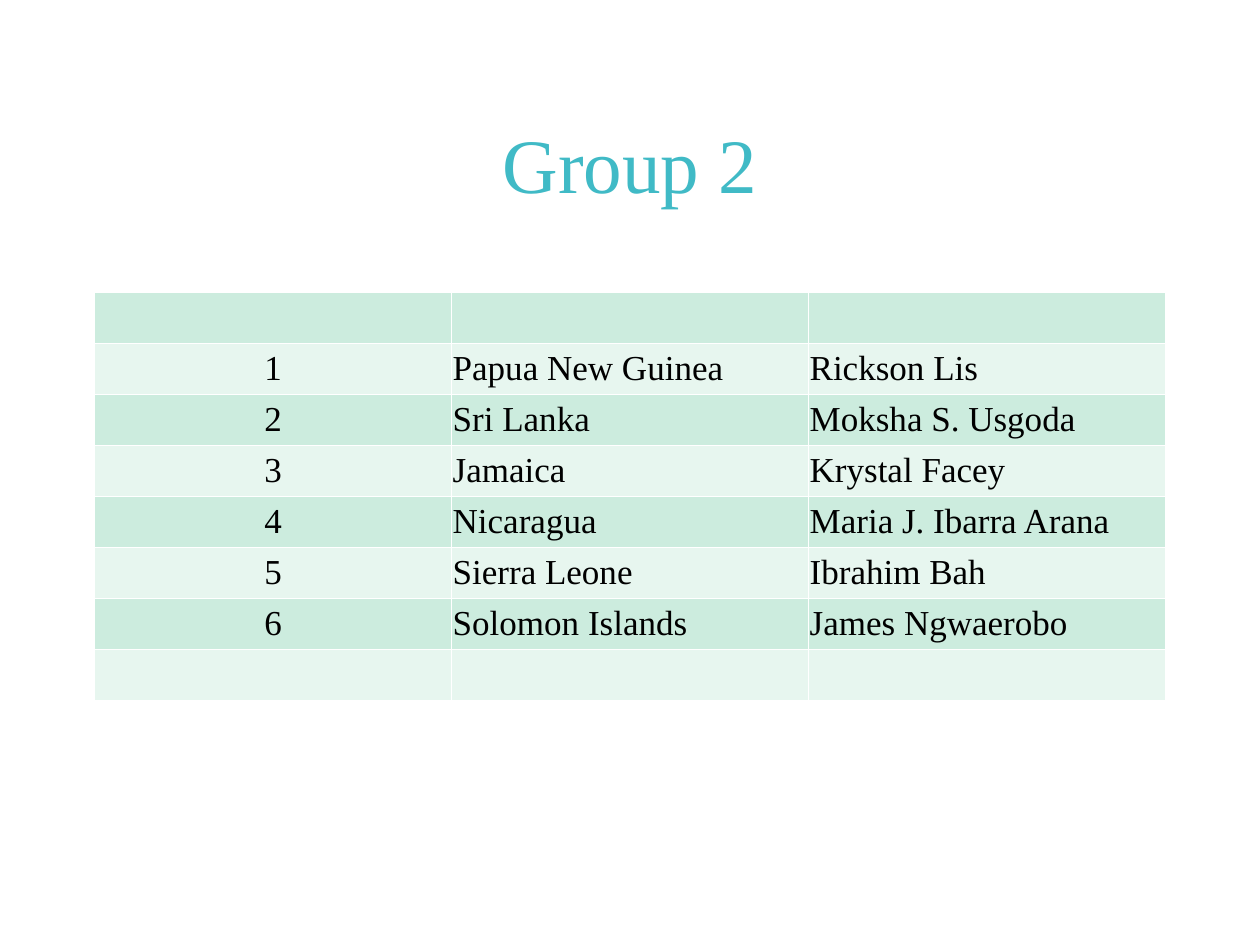
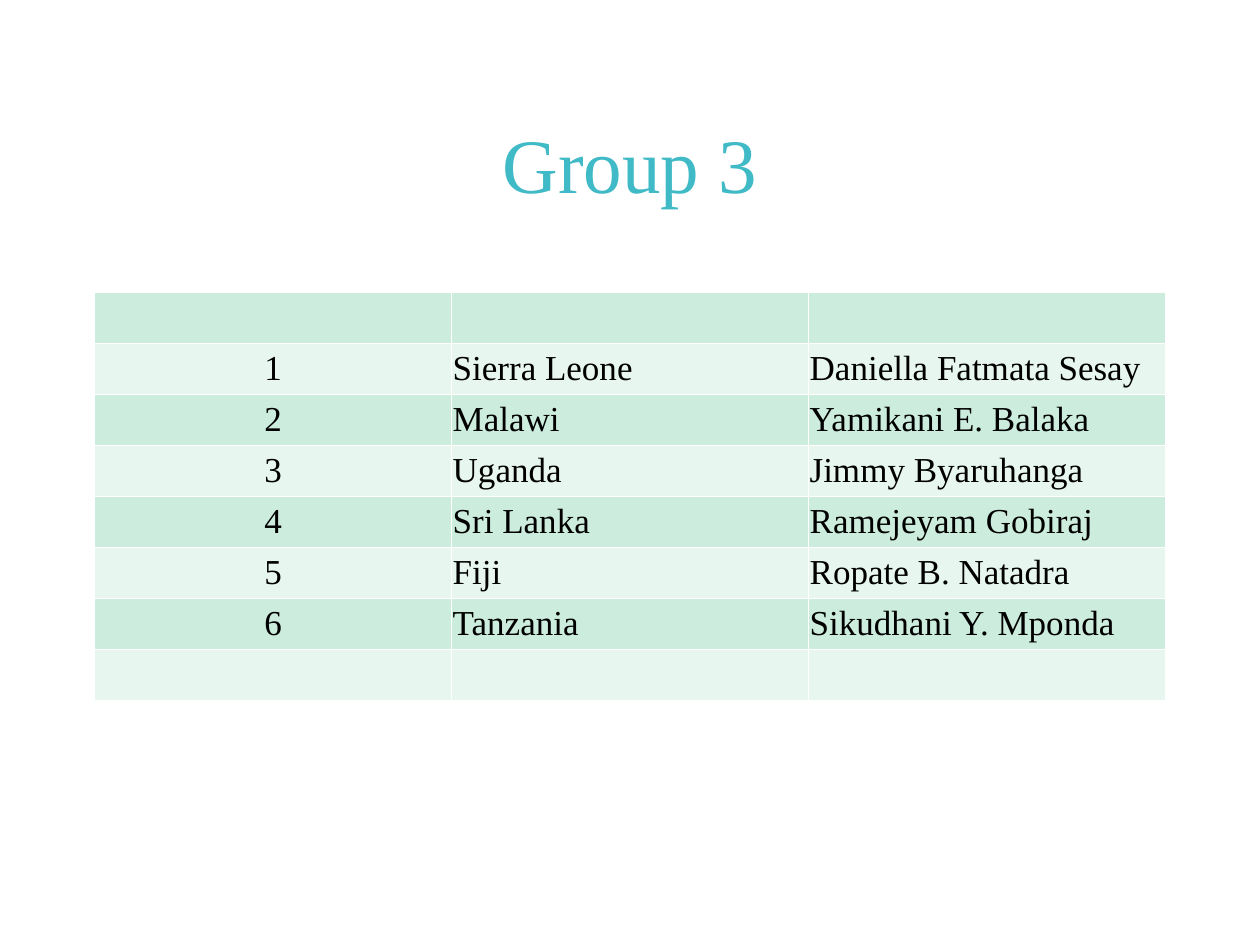
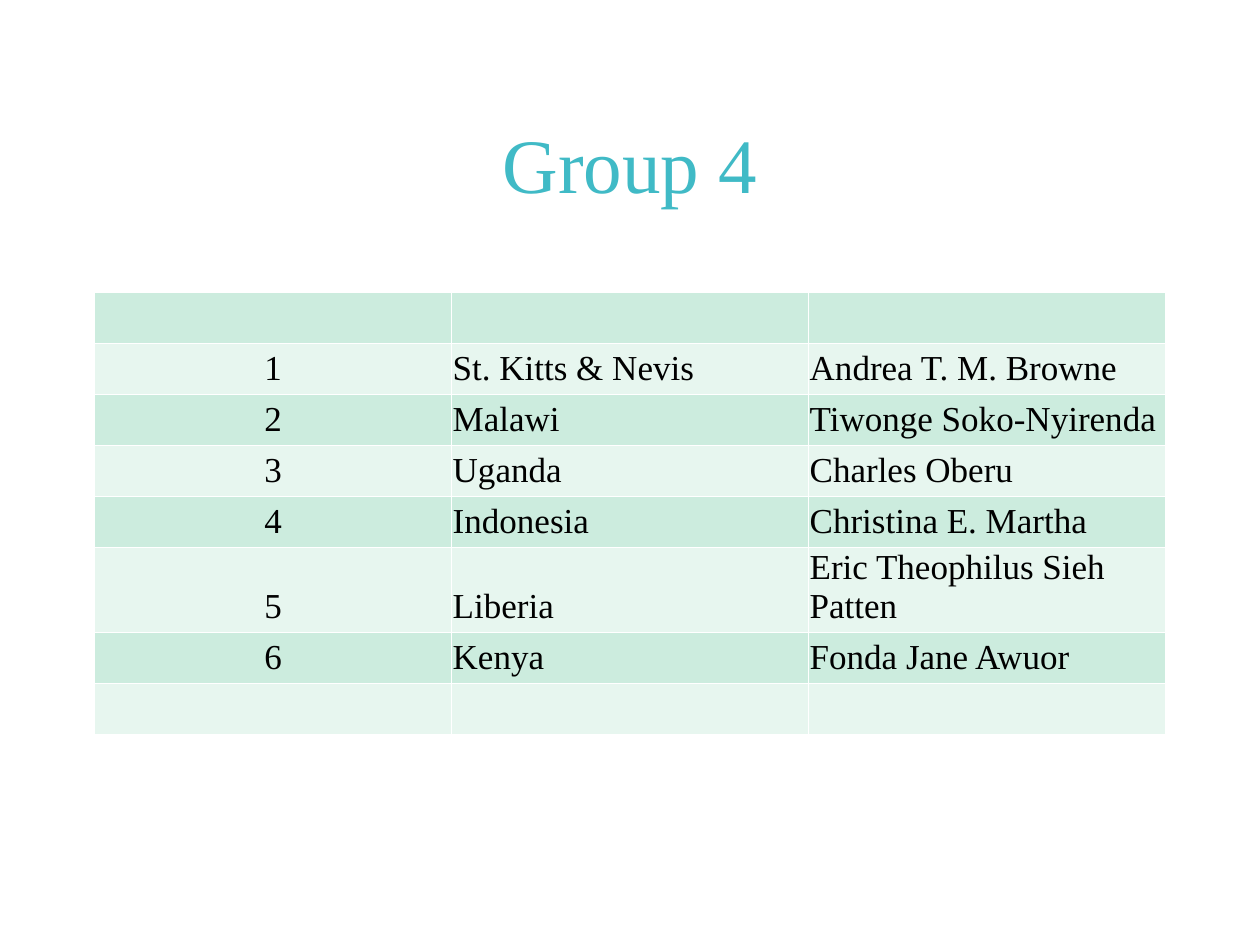
from lxml.etree import SubElement
from pptx import Presentation
from pptx.dml.color import RGBColor
from pptx.enum.text import MSO_ANCHOR, PP_ALIGN
from pptx.oxml.ns import qn
from pptx.util import Inches, Pt

# Shared style
FONT = "Times New Roman"
TITLE_COLOR = RGBColor(0x40, 0xBA, 0xC6)
TEXT_COLOR = RGBColor(0x00, 0x00, 0x00)
BORDER_COLOR = RGBColor(0xFF, 0xFF, 0xFF)
BANDS = [RGBColor(0xCC, 0xEC, 0xDE), RGBColor(0xE7, 0xF6, 0xEF)]
LEFT, WIDTH = Inches(0.75), Inches(8.5)

# Country and delegate of each group member
GROUPS = {
    "Group 2": [
        ("Papua New Guinea", "Rickson Lis"),
        ("Sri Lanka", "Moksha S. Usgoda"),
        ("Jamaica", "Krystal Facey"),
        ("Nicaragua", "Maria J. Ibarra Arana"),
        ("Sierra Leone", "Ibrahim Bah"),
        ("Solomon Islands", "James Ngwaerobo"),
    ],
    "Group 3": [
        ("Sierra Leone", "Daniella Fatmata Sesay"),
        ("Malawi", "Yamikani E. Balaka"),
        ("Uganda", "Jimmy Byaruhanga"),
        ("Sri Lanka", "Ramejeyam Gobiraj"),
        ("Fiji", "Ropate B. Natadra"),
        ("Tanzania", "Sikudhani Y. Mponda"),
    ],
    "Group 4": [
        ("St. Kitts & Nevis", "Andrea T. M. Browne"),
        ("Malawi", "Tiwonge Soko-Nyirenda"),
        ("Uganda", "Charles Oberu"),
        ("Indonesia", "Christina E. Martha"),
        ("Liberia", "Eric Theophilus Sieh Patten"),
        ("Kenya", "Fonda Jane Awuor"),
    ],
}


def format_paragraph(paragraph, size, color, alignment):
    paragraph.alignment = alignment
    paragraph.font.name = FONT
    paragraph.font.size = Pt(size)
    paragraph.font.color.rgb = color


def add_borders(cell):
    properties = cell._tc.get_or_add_tcPr()
    for side in ("a:lnL", "a:lnR", "a:lnT", "a:lnB"):
        line = SubElement(properties, qn(side), w=str(Pt(1)))
        fill = SubElement(line, qn("a:solidFill"))
        SubElement(fill, qn("a:srgbClr"), val=str(BORDER_COLOR))


presentation = Presentation()
presentation.slide_width = Inches(10)
presentation.slide_height = Inches(7.5)
title_only_layout = presentation.slide_layouts[5]

for group, members in GROUPS.items():
    slide = presentation.slides.add_slide(title_only_layout)

    # Title
    title = slide.shapes.title
    title.left, title.top = LEFT, Inches(0.67)
    title.width, title.height = WIDTH, Inches(1.25)
    title.text_frame.text = group
    title.text_frame.vertical_anchor = MSO_ANCHOR.MIDDLE
    format_paragraph(title.text_frame.paragraphs[0], 44, TITLE_COLOR, PP_ALIGN.CENTER)

    # Member table, with an empty row above and below the members
    empty_row = ("", "", "")
    numbered = [(str(number), *member) for number, member in enumerate(members, 1)]
    rows = [empty_row, *numbered, empty_row]
    table = slide.shapes.add_table(
        len(rows), 3, LEFT, Inches(2.32), WIDTH, Inches(3.24)
    ).table
    table.first_row = False
    table.horz_banding = False

    for row_index, row in enumerate(rows):
        for column_index, text in enumerate(row):
            cell = table.cell(row_index, column_index)
            cell.text = text
            cell.vertical_anchor = MSO_ANCHOR.BOTTOM
            cell.margin_left = cell.margin_right = cell.margin_top = Inches(0.01)
            cell.margin_bottom = Inches(0.05)
            add_borders(cell)
            cell.fill.solid()
            cell.fill.fore_color.rgb = BANDS[row_index % 2]
            alignment = PP_ALIGN.CENTER if column_index == 0 else PP_ALIGN.LEFT
            format_paragraph(cell.text_frame.paragraphs[0], 20, TEXT_COLOR, alignment)

presentation.save("out.pptx")
